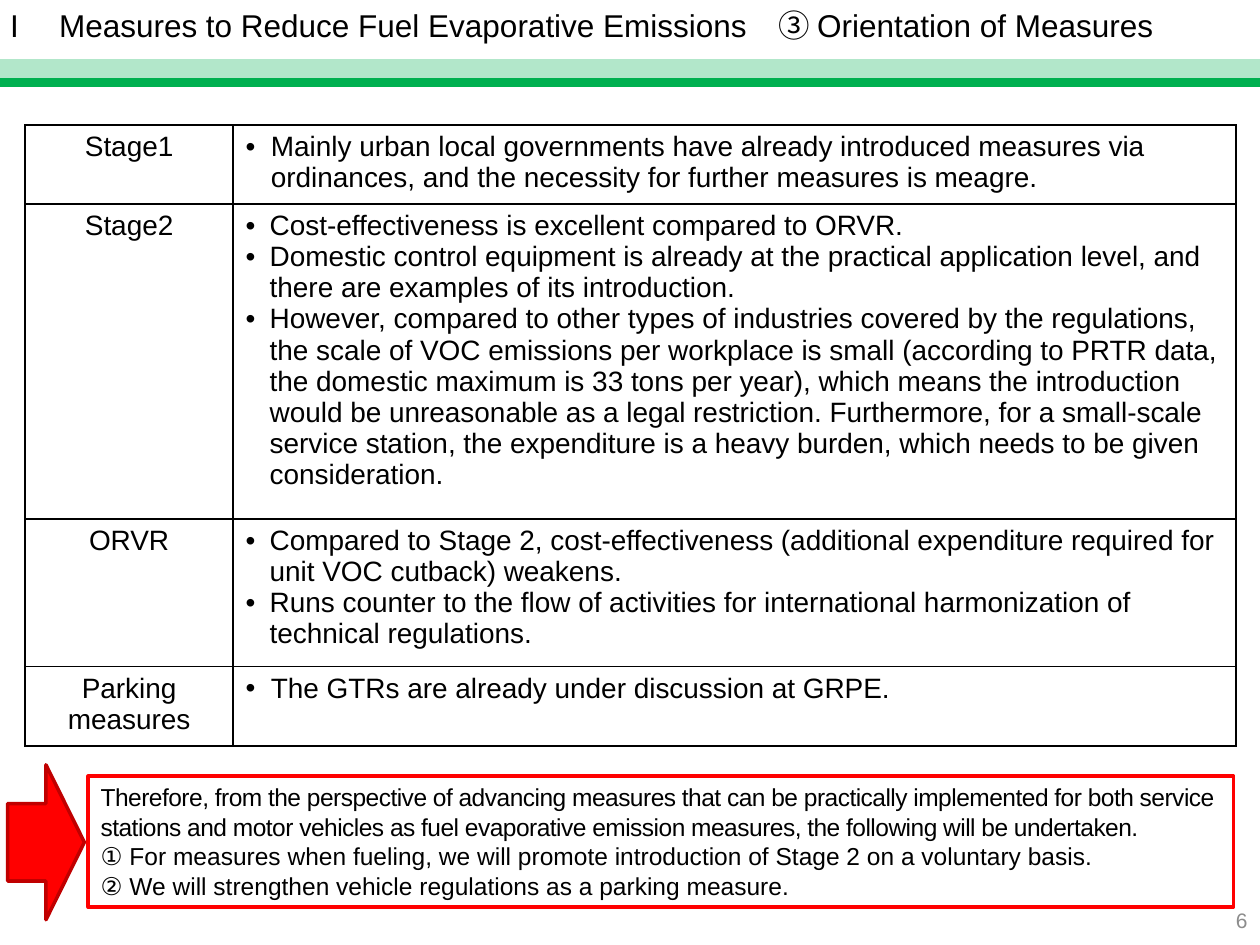
from dataclasses import dataclass
from pptx import Presentation
from pptx.dml.color import RGBColor as RGB
from pptx.enum.shapes import MSO_SHAPE as Kind
from pptx.enum.text import MSO_ANCHOR as Anchor, MSO_AUTO_SIZE as Auto, PP_ALIGN as Align
from pptx.oxml.ns import qn
from pptx.util import Inches, Pt
from lxml.etree import SubElement as Sub, Element


@dataclass(frozen=True)
class Theme:
    font: str = "Arial"
    head: int = 18
    cell: int = 16
    note: int = 14
    num: int = 12
    black: str = "000000"
    white: str = "FFFFFF"
    grey: str = "8C8C8C"
    green: str = "00B050"
    red: str = "FF0000"
    dark: str = "C00000"


T = Theme()

TITLE = "I 　Measures to Reduce Fuel Evaporative Emissions　③ Orientation of Measures"

# Label, row height, bullet indent, points
ROWS = [
    ("Stage1", 0.63, 0.2, [
        "Mainly urban local governments have already introduced measures via "
        "ordinances, and the necessity for further measures is meagre."]),
    ("Stage2", 2.5, 0.19, [
        "Cost-effectiveness is excellent compared to ORVR.",
        "Domestic control equipment is already at the practical application "
        "level, and there are examples of its introduction.",
        "However, compared to other types of industries covered by the "
        "regulations, the scale of VOC emissions per workplace is small "
        "(according to PRTR data, the domestic maximum is 33 tons per year), "
        "which means the introduction would be unreasonable as a legal "
        "restriction. Furthermore, for a small-scale service station, the "
        "expenditure is a heavy burden, which needs to be given consideration."]),
    ("ORVR", 1.17, 0.19, [
        "Compared to Stage 2, cost-effectiveness (additional expenditure "
        "required for unit VOC cutback) weakens.",
        "Runs counter to the flow of activities for international "
        "harmonization of technical regulations."]),
    ("Parking measures", 0.63, 0.2, [
        "The GTRs are already under discussion at GRPE."]),
]
COLS = (1.65, 7.96)

NOTE = [
    "Therefore, from the perspective of advancing measures that can be "
    "practically implemented for both service stations and motor vehicles as "
    "fuel evaporative emission measures, the following will be undertaken.",
    "① For measures when fueling, we will promote introduction of Stage 2 on a voluntary basis.",
    "② We will strengthen vehicle regulations as a parking measure.",
]


def rgb(code):
    return RGB.from_string(code)


def box(*lens):
    return [Inches(n) for n in lens]


def style(frame, size, color=T.black, align=Align.LEFT):
    for para in frame.paragraphs:
        para.alignment = align
        for run in para.runs:
            font = run.font
            font.name, font.size = T.font, Pt(size)
            font.color.rgb = rgb(color)


def shape(slide, kind, place, fill, line=None, alpha=None):
    item = slide.shapes.add_shape(kind, *box(*place))
    item.shadow.inherit = False
    item.fill.solid()
    item.fill.fore_color.rgb = rgb(fill)
    if alpha:
        tone = item.fill._xPr.find(".//" + qn("a:srgbClr"))
        Sub(tone, qn("a:alpha"), val=str(alpha * 1000))
    if line:
        item.line.color.rgb = rgb(line)
        item.line.width = Pt(2)
    else:
        item.line.fill.background()
    return item


def title(slide):
    head = slide.shapes.title
    head.left, head.top, head.width, head.height = box(-0.02, 0, 10.02, 0.5)
    frame = head.text_frame
    frame.text = TITLE
    frame.auto_size = Auto.NONE
    frame.vertical_anchor = Anchor.TOP
    style(frame, T.head)


def bullet(para, indent):
    props = para._p.get_or_add_pPr()
    props.set("marL", str(Inches(indent)))
    props.set("indent", str(-Inches(indent)))
    Sub(props, qn("a:buFont"), typeface=T.font)
    Sub(props, qn("a:buChar"), char="•")


def border(cell):
    cell.fill.background()
    props = cell._tc.get_or_add_tcPr()
    for spot, side in enumerate(("lnL", "lnR", "lnT", "lnB")):
        line = Element(qn("a:" + side), w=str(Pt(1)))
        Sub(Sub(line, qn("a:solidFill")), qn("a:srgbClr"), val=T.black)
        props.insert(spot, line)


def table(slide):
    high = sum(row[1] for row in ROWS)
    place = box(0.2, 0.99, sum(COLS), high)
    grid = slide.shapes.add_table(len(ROWS), len(COLS), *place).table
    grid.first_row = grid.horz_banding = False
    for col, wide in zip(grid.columns, COLS):
        col.width = Inches(wide)
    for row, (name, tall, indent, points) in zip(grid.rows, ROWS):
        row.height = Inches(tall)
        label, body = row.cells
        label.text_frame.text = name
        body.text_frame.text = "\n".join(points)
        for para in body.text_frame.paragraphs:
            bullet(para, indent)
        style(label.text_frame, T.cell, align=Align.CENTER)
        style(body.text_frame, T.cell)
        border(label)
        border(body)


def note(slide):
    shape(slide, Kind.RIGHT_ARROW, (0.06, 6.07, 0.61, 1.23), T.red, T.dark)
    panel = shape(slide, Kind.RECTANGLE, (0.7, 6.16, 9.09, 1.04), T.white, T.red)
    frame = panel.text_frame
    frame.word_wrap = True
    frame.vertical_anchor = Anchor.TOP
    frame.text = "\n".join(NOTE)
    style(frame, T.note)
    # Tighter letter spacing in the lead sentence
    lead = frame.paragraphs[0].runs[0]
    lead.font._element.set("spc", "-30")


def number(slide):
    frame = slide.shapes.add_textbox(*box(7.67, 7.1, 2.33, 0.4)).text_frame
    frame.word_wrap = True
    frame.vertical_anchor = Anchor.MIDDLE
    frame.text = "6"
    style(frame, T.num, T.grey, Align.RIGHT)


def main():
    deck = Presentation()
    deck.slide_width, deck.slide_height = box(10, 7.5)
    slide = deck.slides.add_slide(deck.slide_layouts[5])
    # Header bands
    shape(slide, Kind.RECTANGLE, (0, 0.63, 10, 0.05), T.green, T.green)
    shape(slide, Kind.RECTANGLE, (0, 0.47, 10, 0.18), T.green, alpha=30)
    # Content
    title(slide)
    table(slide)
    note(slide)
    number(slide)
    deck.save("out.pptx")


if __name__ == "__main__":
    main()
